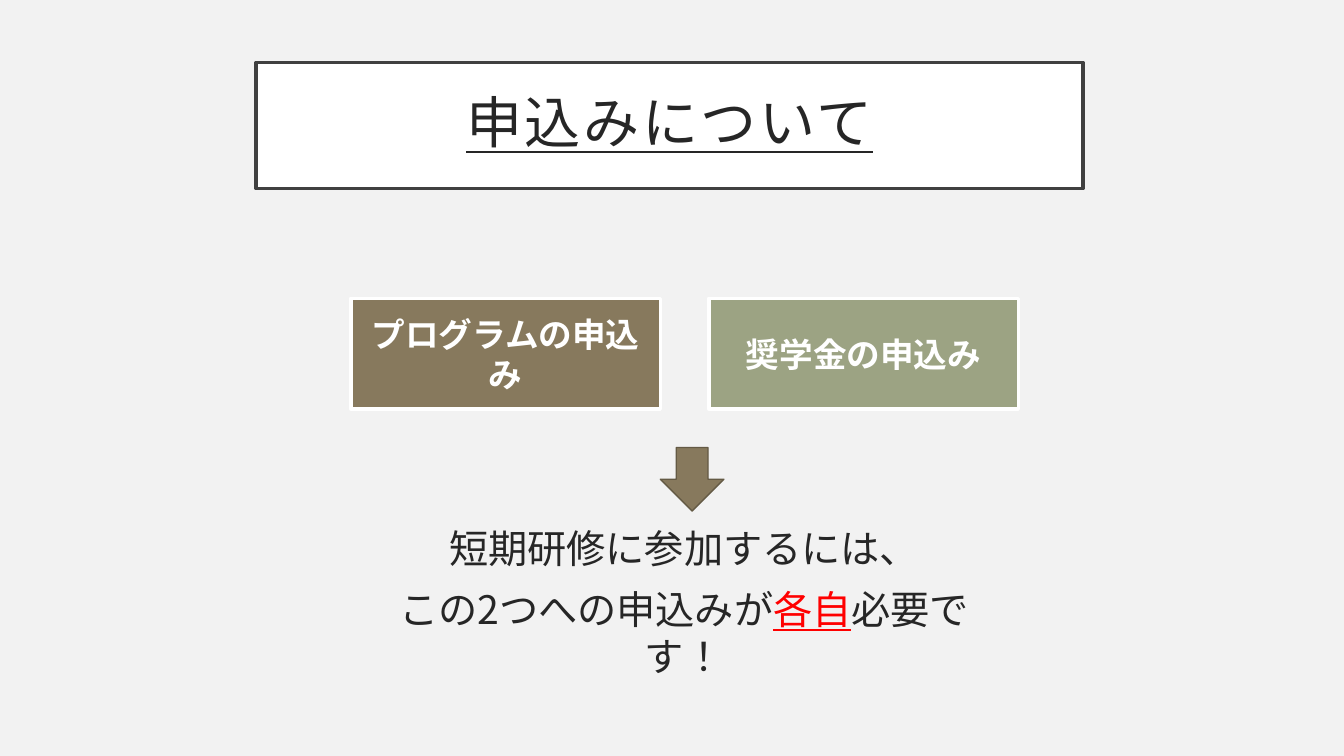
from dataclasses import dataclass

from lxml import etree
from pptx import Presentation
from pptx.dml.color import RGBColor
from pptx.enum.shapes import MSO_SHAPE
from pptx.enum.text import MSO_ANCHOR, MSO_AUTO_SIZE, PP_ALIGN
from pptx.oxml.ns import qn
from pptx.util import Inches, Pt

RECT, DOWN_ARROW = MSO_SHAPE.RECTANGLE, MSO_SHAPE.DOWN_ARROW
CENTER = PP_ALIGN.CENTER
TOP, MIDDLE = MSO_ANCHOR.TOP, MSO_ANCHOR.MIDDLE
NO_AUTOFIT = MSO_AUTO_SIZE.NONE

FONT = "Noto Sans CJK JP"
BACKGROUND = RGBColor(0xF2, 0xF2, 0xF2)
WHITE = RGBColor(0xFF, 0xFF, 0xFF)
INK = RGBColor(0x26, 0x26, 0x26)
FRAME = RGBColor(0x40, 0x40, 0x40)
BROWN = RGBColor(0x87, 0x79, 0x5D)
DARK_BROWN = RGBColor(0x64, 0x5A, 0x45)
GREEN = RGBColor(0x9C, 0xA3, 0x83)
RED = RGBColor(0xFF, 0x00, 0x00)

BODY = {"size": Pt(28), "color": INK}
EMPHASIS = {"size": Pt(28), "color": RED, "underline": True}
MESSAGE = [
    [("短期研修に参加するには、", BODY)],
    [("この2つへの申込みが", BODY), ("各自", EMPHASIS), ("必要です！", BODY)],
]


@dataclass
class Application:
    label: str
    fill: RGBColor


APPLICATIONS = [
    Application("プログラムの申込み", BROWN),
    Application("奨学金の申込み", GREEN),
]


def place(sp, left: float, top: float, width: float, height: float) -> None:
    box = {"left": left, "top": top, "width": width, "height": height}
    for name, value in box.items():
        setattr(sp, name, Inches(value))


def paint(sp, fill: RGBColor, line: RGBColor, width: float) -> None:
    sp.fill.solid()
    sp.fill.fore_color.rgb = fill
    sp.line.color.rgb = line
    sp.line.width = Pt(width)


def format_frame(tf, anchor, inset_x: float = 0.1, inset_y: float = 0.05) -> None:
    frame = {
        "word_wrap": True,
        "auto_size": NO_AUTOFIT,
        "vertical_anchor": anchor,
        "margin_left": Inches(inset_x),
        "margin_right": Inches(inset_x),
        "margin_top": Inches(inset_y),
        "margin_bottom": Inches(inset_y),
    }
    for name, value in frame.items():
        setattr(tf, name, value)


def add_run(p, text: str, formats: dict):
    r = p.add_run()
    r.text = text
    for name, value in {"name": FONT, **formats}.items():
        if name == "color":
            r.font.color.rgb = value
        else:
            setattr(r.font, name, value)
    rPr = r._r.get_or_add_rPr()
    rPr.set("lang", "ja-JP")
    rPr.find(qn("a:latin")).addnext(etree.Element(qn("a:ea"), typeface=FONT))
    return r


def add_shape(s, kind, left: float, top: float, width: float, height: float,
              fill: RGBColor, line: RGBColor, line_width: float):
    sp = s.shapes.add_shape(kind, *map(Inches, (left, top, width, height)))
    sp.shadow.inherit = False
    paint(sp, fill, line, line_width)
    return sp


def add_title(s) -> None:
    sp = s.shapes.title
    place(sp, 2.54, 0.62, 8.2, 1.25)
    paint(sp, WHITE, FRAME, 2.5)
    format_frame(sp.text_frame, MIDDLE, 0.2, 0.2)
    p = sp.text_frame.paragraphs[0]
    p.alignment = CENTER
    p.line_spacing = 0.9
    r = add_run(p, "申込みについて", {"size": Pt(40), "color": INK, "underline": True})
    r._r.rPr.set("spc", "200")


def add_application(s, index: int, application: Application) -> None:
    sp = add_shape(s, RECT, 3.48 + 3.55 * index, 2.96, 3.07, 1.1,
                   application.fill, WHITE, 2.5)
    format_frame(sp.text_frame, MIDDLE)
    p = sp.text_frame.paragraphs[0]
    p.alignment = CENTER
    add_run(p, application.label, {"size": Pt(24), "color": WHITE, "bold": True})


def add_message(s) -> None:
    sp = s.placeholders[1]
    place(sp, 3.45, 5.15, 6.58, 1.5)
    tf = sp.text_frame
    format_frame(tf, TOP)
    for i, runs in enumerate(MESSAGE):
        p = tf.add_paragraph() if i else tf.paragraphs[0]
        p.alignment = CENTER
        p.space_before = Pt(10)
        pPr = p._p.get_or_add_pPr()
        pPr.set("marL", str(Inches(0.09)))
        pPr.set("indent", "0")
        etree.SubElement(pPr, qn("a:buNone"))
        for text, formats in runs:
            add_run(p, text, formats)


def main() -> None:
    prs = Presentation()
    prs.slide_width, prs.slide_height = Inches(13.33), Inches(7.5)
    s = prs.slides.add_slide(prs.slide_layouts[1])
    s.background.fill.solid()
    s.background.fill.fore_color.rgb = BACKGROUND
    add_title(s)
    for index, application in enumerate(APPLICATIONS):
        add_application(s, index, application)
    add_message(s)
    add_shape(s, DOWN_ARROW, 6.55, 4.44, 0.63, 0.63, BROWN, DARK_BROWN, 1)
    prs.save("out.pptx")


if __name__ == "__main__":
    main()
